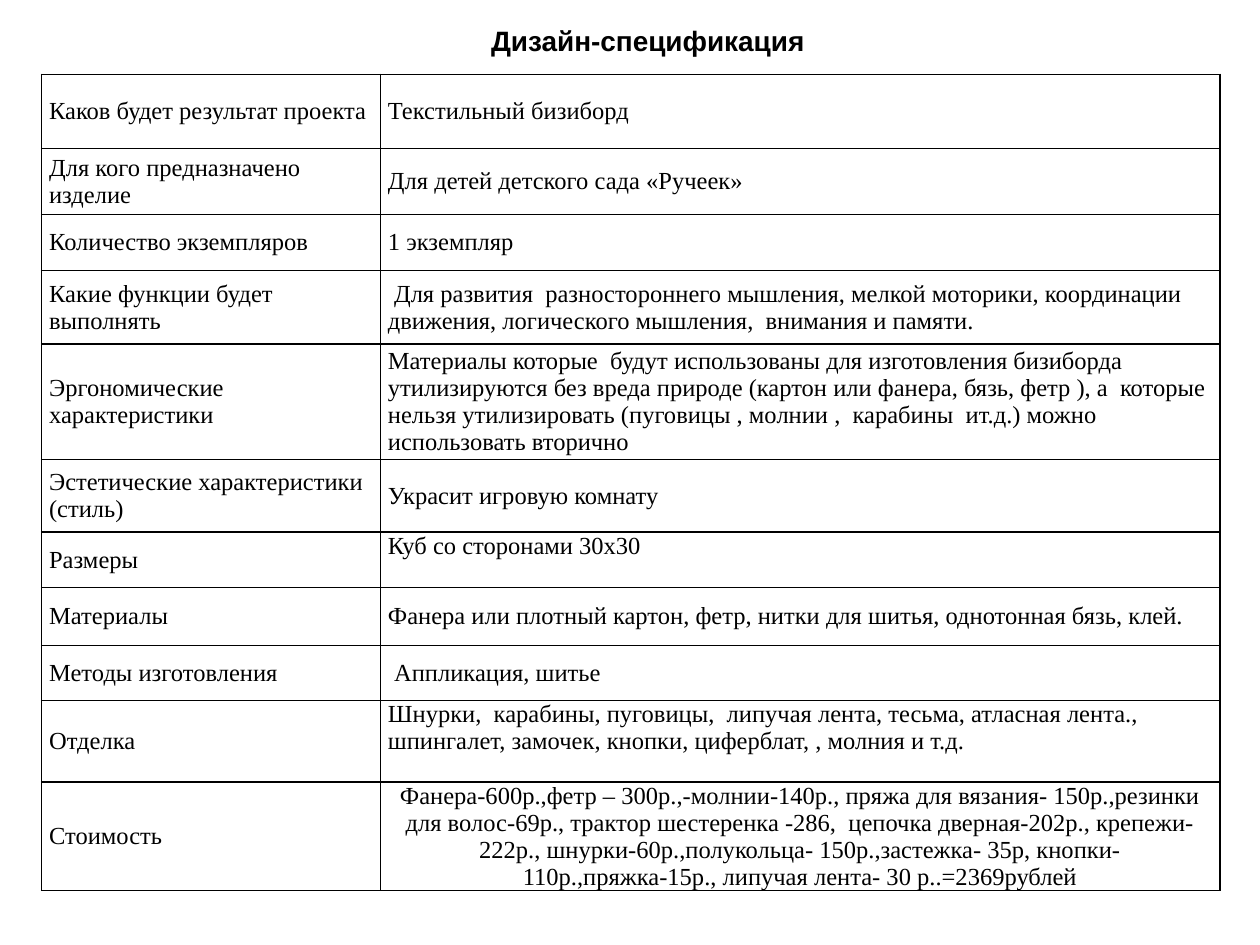
from pptx import Presentation
from pptx import util as u
from pptx.dml.color import RGBColor
from pptx.enum import text
from pptx.oxml import parse_xml
from pptx.oxml.ns import nsdecls

BLACK = RGBColor(0, 0, 0)
TITLE = "Дизайн-спецификация"
MIDDLE, TOP = text.MSO_ANCHOR.MIDDLE, text.MSO_ANCHOR.TOP
LEFT, CENTER = text.PP_ALIGN.LEFT, text.PP_ALIGN.CENTER

ROWS = [
    (1.49, "Каков будет результат проекта", "Текстильный бизиборд"),
    (1.33, "Для кого предназначено изделие", "Для детей детского сада «Ручеек»"),
    (1.13, "Количество экземпляров", "1 экземпляр"),
    (1.49, "Какие функции будет выполнять",
     " Для развития  разностороннего мышления, мелкой моторики, координации "
     "движения, логического мышления,  внимания и памяти."),
    (2.32, "Эргономические характеристики",
     "Материалы которые  будут использованы для изготовления бизиборда "
     "утилизируются без вреда природе (картон или фанера, бязь, фетр ), а  которые "
     "нельзя утилизировать (пуговицы , молнии ,  карабины  ит.д.) можно "
     "использовать вторично"),
    (1.47, "Эстетические характеристики (стиль)", "Украсит игровую комнату"),
    (1.11, "Размеры", "Куб со сторонами 30х30"),
    (1.17, "Материалы",
     "Фанера или плотный картон, фетр, нитки для шитья, однотонная бязь, клей."),
    (1.11, "Методы изготовления", " Аппликация, шитье"),
    (1.65, "Отделка",
     "Шнурки,  карабины, пуговицы,  липучая лента, тесьма, атласная лента.,  "
     "шпингалет, замочек, кнопки, циферблат, , молния и т.д."),
    (2.18, "Стоимость",
     "Фанера-600р.,фетр – 300р.,-молнии-140р., пряжа для вязания- 150р.,резинки "
     "для волос-69р., трактор шестеренка -286,  цепочка дверная-202р., крепежи- "
     "222р., шнурки-60р.,полукольца- 150р.,застежка- 35р, кнопки- "
     "110р.,пряжка-15р., липучая лента- 30 р..=2369рублей"),
]
COLS = [6.83, 16.92]
TOP_VALUES = {"Размеры", "Отделка"}
CENTERED_VALUES = {"Стоимость"}

CELL = dict(margin_left=u.Cm(0.15), margin_right=u.Cm(0.15), margin_top=0, margin_bottom=0)
CELL_FONT = dict(name="Times New Roman", size=u.Pt(14), bold=False)
TITLE_BOX = dict(left=u.Cm(9.65), top=0, width=u.Cm(8.94), height=u.Cm(1.88))
TITLE_FRAME = dict(margin_left=u.Cm(0.25), margin_right=u.Cm(0.25), margin_top=u.Cm(0.48),
                   margin_bottom=0, vertical_anchor=TOP, word_wrap=True,
                   auto_size=text.MSO_AUTO_SIZE.NONE)
TITLE_FONT = dict(name="Arial", size=u.Pt(16), bold=True)


def apply(obj, values):
    for name, value in values.items():
        setattr(obj, name, value)


def write(p, content, font, align):
    p.alignment = align
    r = p.add_run()
    r.text = content
    apply(r.font, font)
    r.font.color.rgb = BLACK


def add_borders(cell):
    tc_pr = cell._tc.get_or_add_tcPr()
    for i, side in enumerate(("lnL", "lnR", "lnT", "lnB")):
        tc_pr.insert(i, parse_xml(
            f'<a:{side} {nsdecls("a")} w="{u.Pt(1)}"><a:solidFill>'
            f'<a:srgbClr val="{BLACK}"/></a:solidFill></a:{side}>'))


def add_specification(s):
    frame = s.shapes.add_table(len(ROWS), len(COLS), u.Cm(0.84), u.Cm(1.5),
                               u.Cm(sum(COLS)), u.Cm(sum(row[0] for row in ROWS)))
    table = frame.table
    apply(table, dict(first_row=False, horz_banding=False))
    for col, width in zip(table.columns, COLS):
        col.width = u.Cm(width)
    for row, (height, label, value) in zip(table.rows, ROWS):
        row.height = u.Cm(height)
        formats = [
            (label, MIDDLE, LEFT),
            (value, TOP if label in TOP_VALUES else MIDDLE,
             CENTER if label in CENTERED_VALUES else LEFT),
        ]
        for cell, (content, anchor, align) in zip(row.cells, formats):
            apply(cell, CELL)
            cell.vertical_anchor = anchor
            cell.fill.background()
            add_borders(cell)
            write(cell.text_frame.paragraphs[0], content, CELL_FONT, align)


def main():
    prs = Presentation()
    apply(prs, dict(slide_width=u.Cm(25.4), slide_height=u.Cm(19.05)))
    s = prs.slides.add_slide(prs.slide_layouts[5])
    add_specification(s)
    title = s.shapes.title
    apply(title, TITLE_BOX)
    apply(title.text_frame, TITLE_FRAME)
    write(title.text_frame.paragraphs[0], TITLE, TITLE_FONT, LEFT)
    prs.save("out.pptx")


if __name__ == "__main__":
    main()
